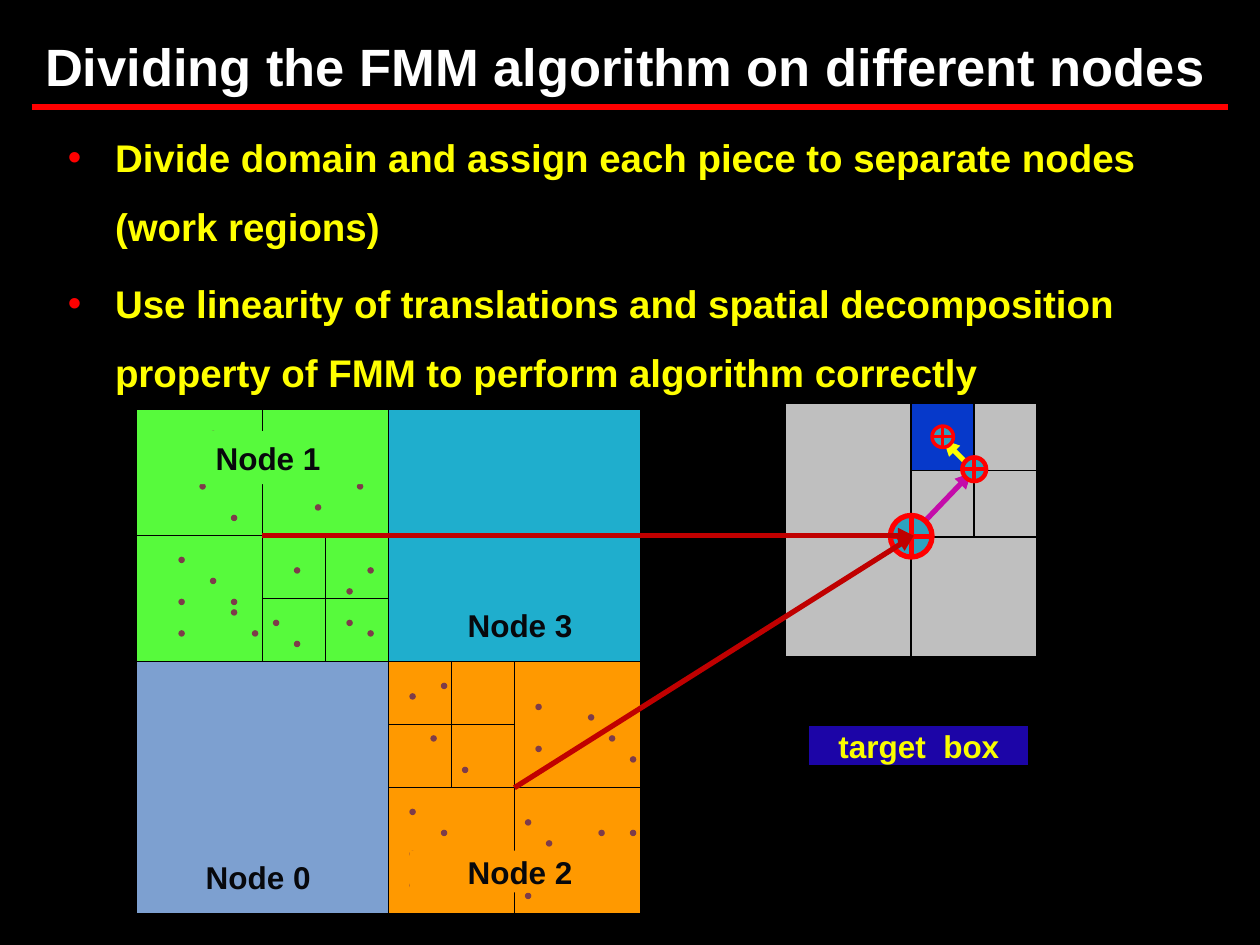
from lxml import etree
from pptx import Presentation
from pptx import util as u
from pptx.dml.color import RGBColor
from pptx.enum import shapes, text
from pptx.oxml import ns

BLACK = RGBColor(0, 0, 0)
WHITE = RGBColor(255, 255, 255)
RED = RGBColor(255, 0, 0)
DARK_RED = RGBColor(0xC0, 0, 0)
YELLOW = RGBColor(255, 255, 0)
PALE_YELLOW = RGBColor(0xFA, 0xFD, 0)
MAGENTA = RGBColor(0xC4, 0x0C, 0xAA)
GRAY = RGBColor(0xBF, 0xBF, 0xBF)
BLUE = RGBColor(0x06, 0x39, 0xCA)
INDIGO = RGBColor(0x1C, 0x05, 0xA7)
TEAL = RGBColor(0x2D, 0xA2, 0xBF)
GREEN = RGBColor(0x57, 0xFA, 0x3C)
ORANGE = RGBColor(0xFF, 0x99, 0)
SKY = RGBColor(0x1F, 0xAE, 0xCD)
STEEL = RGBColor(0x7D, 0xA0, 0xD0)
MAROON = RGBColor(0x7D, 0x3C, 0x4A)
INK = RGBColor(0x07, 0x08, 0x0C)

SIDE = 5.08
HALF, QUARTER = SIDE / 2, SIDE / 4
STEP = SIDE / 24
NODE_1_DOTS = [(6, 7), (7, 2), (21, 7), (15, 15), (22, 15), (13, 20), (20, 20),
               (9, 10), (22, 21), (15, 22), (4, 18), (9, 19), (4, 14), (17, 9),
               (7, 16), (4, 21), (20, 17), (11, 21), (9, 18)]
NODE_2_DOTS = [(23, 16), (4, 7), (5, 2), (2, 3), (13, 15), (7, 10), (13, 22),
               (2, 18), (14, 8), (2, 14), (5, 16), (2, 21), (14, 4), (19, 5),
               (20, 16), (15, 17), (21, 7), (23, 9)]


def cm(*values):
    return [u.Cm(v) for v in values]


def apply(obj, **values):
    for name, value in values.items():
        setattr(obj, name, value)


def add_run(p, words, size, color):
    r = p.add_run()
    r.text = words
    apply(r.font, name="Arial", size=u.Pt(size), bold=True)
    r.font.color.rgb = color


def add_line(s, start, end, color, arrow=True):
    sp = s.shapes.add_connector(shapes.MSO_CONNECTOR.STRAIGHT, *cm(*start, *end))
    sp.line.color.rgb = color
    sp.line.width = u.Pt(3)
    if arrow:
        etree.SubElement(sp.line._get_or_add_ln(), ns.qn("a:tailEnd"), type="triangle")
    etree.SubElement(sp._element.spPr, ns.qn("a:effectLst"))


def add_shape(s, kind, box, fill, line=None, width=1):
    sp = s.shapes.add_shape(kind, *cm(*box))
    sp.shadow.inherit = False
    sp.fill.solid()
    sp.fill.fore_color.rgb = fill
    if line is None:
        sp.line.fill.background()
    else:
        sp.line.color.rgb = line
        sp.line.width = u.Pt(width)
    return sp


def add_label(s, words, box, color, fill=None, line=None):
    if fill is None:
        sp = s.shapes.add_textbox(*cm(*box))
    else:
        sp = add_shape(s, shapes.MSO_SHAPE.RECTANGLE, box, fill, line)
    tf = sp.text_frame
    apply(tf, word_wrap=False, vertical_anchor=text.MSO_ANCHOR.MIDDLE)
    p = tf.paragraphs[0]
    p.alignment = text.PP_ALIGN.CENTER
    add_run(p, words, 18, color)


def add_border(cell):
    tc_pr = cell._tc.get_or_add_tcPr()
    for i, edge in enumerate(("lnL", "lnR", "lnT", "lnB")):
        ln = etree.Element(ns.qn(f"a:{edge}"), w=str(u.Pt(1)))
        fill = etree.SubElement(ln, ns.qn("a:solidFill"))
        etree.SubElement(fill, ns.qn("a:srgbClr"), val=str(BLACK))
        tc_pr.insert(i, ln)


def add_grid(s, x, y, cols, rows, color, merges=()):
    frame = s.shapes.add_table(len(rows), len(cols), *cm(x, y, sum(cols), sum(rows)))
    table = frame.table
    for col, width in zip(table.columns, cols):
        col.width = u.Cm(width)
    for row, height in zip(table.rows, rows):
        row.height = u.Cm(height)
    for cell in table.iter_cells():
        cell.fill.solid()
        cell.fill.fore_color.rgb = color
        add_border(cell)
    for first, last in merges:
        table.cell(*first).merge(table.cell(*last))
    return table


def add_title(s, x, y, w, h):
    tf = s.shapes.add_textbox(*cm(x, y, w, h)).text_frame
    apply(tf, word_wrap=True, vertical_anchor=text.MSO_ANCHOR.MIDDLE)
    add_run(tf.paragraphs[0], "Dividing the FMM algorithm on different nodes", 30, WHITE)
    add_line(s, (x - 0.02, y + 2.01), (x + w + 0.05, y + 2.01), RED, arrow=False)


def add_bullets(s, x, y, w, h, items):
    tf = s.shapes.add_textbox(*cm(x, y, w, h)).text_frame
    tf.word_wrap = True
    for i, words in enumerate(items):
        p = tf.add_paragraph() if i else tf.paragraphs[0]
        apply(p, line_spacing=1.5, space_before=u.Pt(4.4))
        p_pr = p._p.get_or_add_pPr()
        p_pr.set("marL", str(u.Cm(0.95)))
        p_pr.set("indent", str(u.Cm(-0.95)))
        color = etree.SubElement(p_pr, ns.qn("a:buClr"))
        etree.SubElement(color, ns.qn("a:srgbClr"), val=str(RED))
        etree.SubElement(p_pr, ns.qn("a:buFont"), typeface="Arial")
        etree.SubElement(p_pr, ns.qn("a:buChar"), char="•")
        add_run(p, words, 22, YELLOW)


def add_target(s, x, y):
    table = add_grid(s, x, y, (HALF, QUARTER, QUARTER), (1.35, 1.35, 2.41), GRAY,
                     [((0, 0), (1, 0)), ((2, 1), (2, 2))])
    table.cell(0, 1).fill.fore_color.rgb = BLUE
    add_line(s, (x + 2.59, y + 2.62), (x + 3.76, y + 1.4), MAGENTA)
    add_line(s, (x + 3.76, y + 1.3), (x + 3.2, y + 0.74), YELLOW)
    add_label(s, "target  box", (x + 0.48, y + 6.48, 4.45, 0.84), PALE_YELLOW, INDIGO, BLACK)
    for dx, dy, size, width in ((2.13, 2.26, 0.84, 3), (3.58, 1.09, 0.48, 2.5),
                                (2.97, 0.46, 0.43, 2)):
        add_shape(s, shapes.MSO_SHAPE.FLOWCHART_OR, (x + dx, y + dy, size, size),
                  TEAL, RED, width)


def add_dots(s, x, y, dots):
    for col, row in dots:
        add_shape(s, shapes.MSO_SHAPE.OVAL,
                  (x + col * STEP, y + row * STEP, 0.13, 0.13), MAROON)


def add_domain(s, x, y):
    right, low = x + SIDE, y + SIDE
    add_grid(s, x, y, (HALF, QUARTER, QUARTER), (HALF, QUARTER, QUARTER), GREEN,
             [((0, 1), (0, 2)), ((1, 0), (2, 0))])
    add_grid(s, right, low, (QUARTER, QUARTER, HALF), (QUARTER, QUARTER, HALF), ORANGE,
             [((0, 2), (1, 2)), ((2, 0), (2, 1))])
    add_dots(s, x, y, NODE_1_DOTS)
    add_dots(s, right, low, NODE_2_DOTS)
    add_grid(s, x, low, (SIDE,), (SIDE,), STEEL)
    add_grid(s, right, y, (SIDE,), (SIDE,), SKY)
    for words, left, top, h, fill in (
            ("Node 0", x + 0.23, low + 3.81, 1.07, None),
            ("Node 3", right + 0.43, y + 3.81, 1.07, None),
            ("Node 1", x + 0.43, y + 0.43, 1.07, GREEN),
            ("Node 2", right + 0.43, low + 3.81, 0.84, ORANGE)):
        add_label(s, words, (left, top, 4.45, h), INK, fill)


def add_translations(s, x, y, end):
    for offset in (HALF, SIDE + HALF):
        add_line(s, (x + offset, y + offset), end, DARK_RED)


def main():
    prs = Presentation()
    apply(prs, slide_width=u.Cm(25.4), slide_height=u.Cm(19.05))
    s = prs.slides.add_slide(prs.slide_layouts[6])
    s.background.fill.solid()
    s.background.fill.fore_color.rgb = BLACK
    add_title(s, 0.66, 0.15, 24.05, 2.34)
    add_bullets(s, 1.12, 2.11, 23.29, 11.43, [
        "Divide domain and assign each piece to separate nodes (work regions)",
        "Use linearity of translations and spatial decomposition property of FMM "
        "to perform algorithm correctly"])
    add_target(s, 15.82, 8.13)
    add_domain(s, 2.75, 8.26)
    add_translations(s, 2.75, 8.26, (18.42, 10.8))
    prs.save("out.pptx")


if __name__ == "__main__":
    main()
